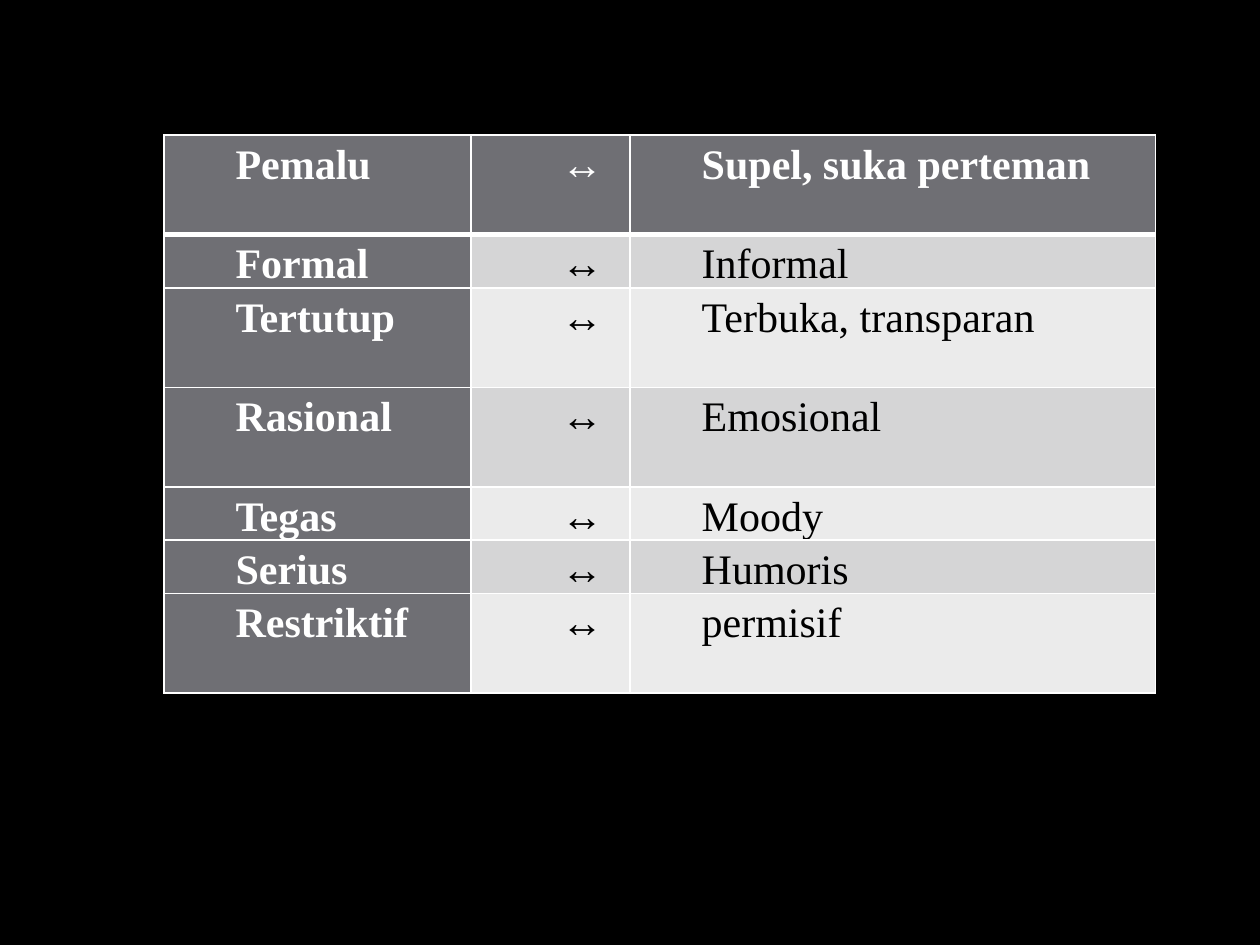
from dataclasses import dataclass

import lxml.etree
import pptx
import pptx.dml.color
import pptx.enum.text
import pptx.oxml.ns
import pptx.table
import pptx.util

Inches = pptx.util.Inches
RGB = pptx.dml.color.RGBColor.from_string
ALIGN = pptx.enum.text.PP_ALIGN
qn = pptx.oxml.ns.qn


@dataclass(frozen=True)
class Theme:
    background: str = "000000"
    heading_fill: str = "6F6F74"
    heading_text: str = "FFFFFF"
    band_fills: tuple[str, str] = ("D5D5D6", "EBEBEB")
    body_text: str = "000000"
    border: str = "FFFFFF"
    thin: float = 1
    thick: float = 3
    font: str = "Times New Roman"
    size: float = 24


@dataclass(frozen=True)
class TraitPair:
    trait: str
    opposite: str
    height: float


THEME = Theme()
SHORT, TALL = 0.38, 0.79
COLUMN_WIDTHS = (2.44, 1.26, 4.17)
TAB_STOPS = (0.44, 0.69)
PAIRS = (
    TraitPair("Pemalu", "Supel, suka perteman", TALL),
    TraitPair("Formal", "Informal", SHORT),
    TraitPair("Tertutup", "Terbuka, transparan", TALL),
    TraitPair("Rasional", "Emosional", TALL),
    TraitPair("Tegas", "Moody", SHORT),
    TraitPair("Serius", "Humoris", SHORT),
    TraitPair("Restriktif", "permisif", TALL),
)


def set_borders(cell: pptx.table._Cell, row: int) -> None:
    """Thin lines all round, thick between the header and the body."""
    tc_pr = cell._tc.get_or_add_tcPr()
    widths = {
        "L": THEME.thin,
        "R": THEME.thin,
        "T": THEME.thick if row == 1 else THEME.thin,
        "B": THEME.thick if row == 0 else THEME.thin,
    }
    for side, width in widths.items():
        ln = lxml.etree.SubElement(tc_pr, qn(f"a:ln{side}"), w=str(pptx.util.Pt(width)))
        fill = lxml.etree.SubElement(ln, qn("a:solidFill"))
        lxml.etree.SubElement(fill, qn("a:srgbClr"), val=THEME.border)


def write_text(cell: pptx.table._Cell, text: str, align: ALIGN, heading: bool) -> None:
    cell.margin_left = cell.margin_right = Inches(0.07)
    cell.margin_top = cell.margin_bottom = 0
    p = cell.text_frame.paragraphs[0]
    p_pr = p._p.get_or_add_pPr()
    p_pr.set("marL", str(Inches(0.5)))
    p_pr.set("indent", "0")
    tabs = lxml.etree.SubElement(p_pr, qn("a:tabLst"))
    for stop in TAB_STOPS:
        lxml.etree.SubElement(tabs, qn("a:tab"), pos=str(Inches(stop)), algn="l")
    p.alignment = align
    p.line_spacing = 1.15
    r = p.add_run()
    r.text = text
    r.font.name = THEME.font
    r.font.size = pptx.util.Pt(THEME.size)
    r.font.bold = heading
    r.font.color.rgb = RGB(THEME.heading_text if heading else THEME.body_text)


def fill_row(table: pptx.table.Table, row: int, pair: TraitPair) -> None:
    table.rows[row].height = Inches(pair.height)
    for col, text in enumerate((pair.trait, "↔", pair.opposite)):
        cell = table.cell(row, col)
        heading = row == 0 or col == 0
        set_borders(cell, row)
        cell.fill.solid()
        cell.fill.fore_color.rgb = RGB(
            THEME.heading_fill if heading else THEME.band_fills[(row - 1) % 2]
        )
        write_text(cell, text, ALIGN.CENTER if col == 1 else ALIGN.JUSTIFY, heading)


def main() -> None:
    prs = pptx.Presentation()
    prs.slide_width, prs.slide_height = Inches(10), Inches(7.5)

    # Black slide without placeholders
    s = prs.slides.add_slide(prs.slide_layouts[6])
    s.background.fill.solid()
    s.background.fill.fore_color.rgb = RGB(THEME.background)

    # Table of opposite traits
    table = s.shapes.add_table(
        len(PAIRS), len(COLUMN_WIDTHS), Inches(1.3), Inches(1.07),
        Inches(sum(COLUMN_WIDTHS)), Inches(sum(pair.height for pair in PAIRS)),
    ).table
    table.first_col = True
    for column, width in zip(table.columns, COLUMN_WIDTHS):
        column.width = Inches(width)
    for row, pair in enumerate(PAIRS):
        fill_row(table, row, pair)

    prs.save("out.pptx")


if __name__ == "__main__":
    main()
